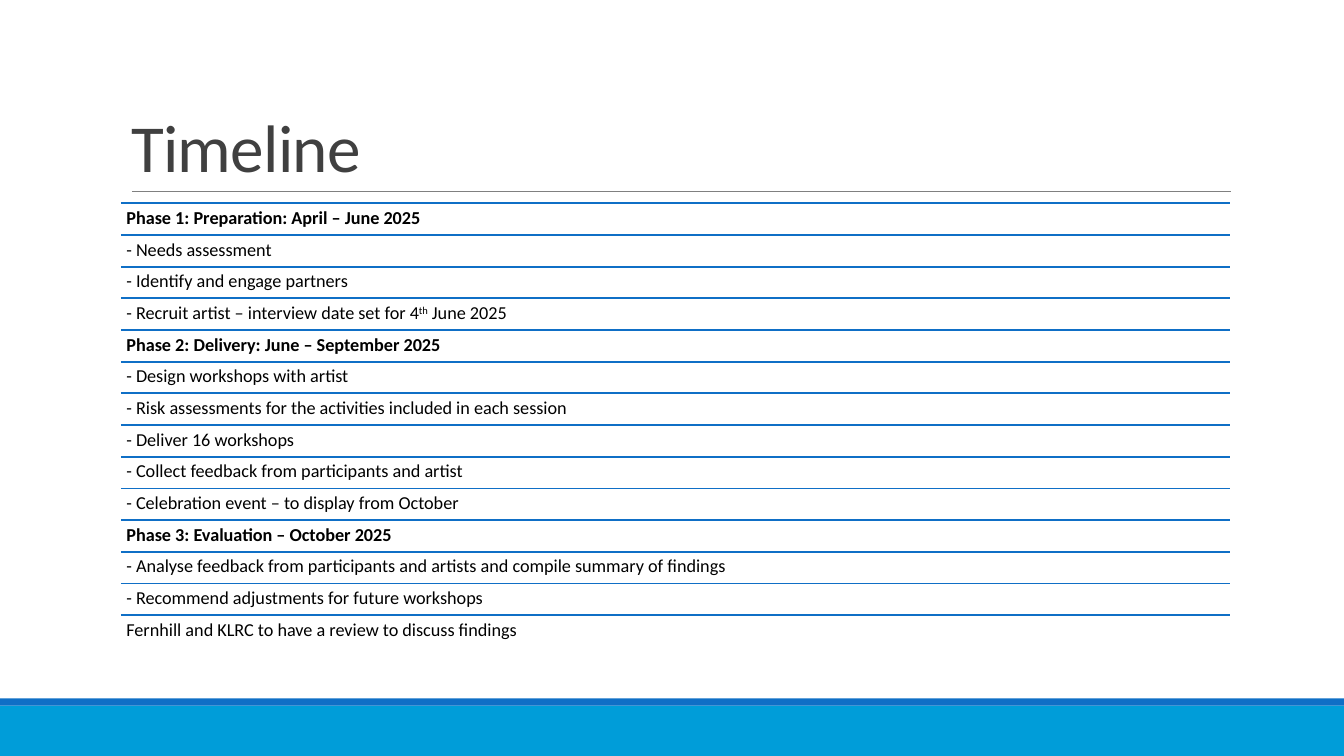
from lxml.etree import SubElement
from pptx import Presentation
from pptx.dml.color import RGBColor
from pptx.enum.shapes import MSO_CONNECTOR, MSO_SHAPE
from pptx.enum.text import MSO_ANCHOR, MSO_AUTO_SIZE, PP_ALIGN
from pptx.oxml.ns import qn
from pptx.util import Pt

BLUE = RGBColor(0x0F, 0x6F, 0xC6)
CYAN = RGBColor(0x00, 0x9D, 0xD9)
GREY = RGBColor(0x80, 0x80, 0x80)
DARK = RGBColor(0x40, 0x40, 0x40)
BLACK = RGBColor(0, 0, 0)

FONT = "Calibri"
SLIDE_WIDTH, SLIDE_HEIGHT = 960, 540
LEFT, WIDTH = 86.4, 792
ROWS_TOP, ROW_HEIGHT = 145.2, 22.63
SUPERSCRIPT = "th"

PHASES = [
    ("Phase 1: Preparation: April – June 2025", [
        ["- Needs assessment"],
        ["- Identify and engage partners"],
        ["- Recruit artist – interview date set for 4", SUPERSCRIPT, " June 2025"],
    ]),
    ("Phase 2: Delivery: June – September 2025", [
        ["- Design workshops with artist"],
        ["- Risk assessments for the activities included in each session"],
        ["- Deliver 16 workshops"],
        ["- Collect feedback from participants and artist"],
        ["- Celebration event – to display from October"],
    ]),
    ("Phase 3: Evaluation – October 2025", [
        ["- Analyse feedback from participants and artists and compile summary of findings"],
        ["- Recommend adjustments for future workshops"],
        ["Fernhill and KLRC to have a review to discuss findings"],
    ]),
]


def add_band(slide, top, height, color):
    band = slide.shapes.add_shape(
        MSO_SHAPE.RECTANGLE, Pt(0), Pt(top), Pt(SLIDE_WIDTH), Pt(height))
    band.shadow.inherit = False
    band.fill.solid()
    band.fill.fore_color.rgb = color
    band.line.fill.background()


def add_rule(slide, left, top, width, color, weight):
    rule = slide.shapes.add_connector(
        MSO_CONNECTOR.STRAIGHT, Pt(left), Pt(top), Pt(left + width), Pt(top))
    rule.line.color.rgb = color
    rule.line.width = Pt(weight)
    SubElement(rule._element.spPr, qn("a:effectLst"))


def add_run(paragraph, text, size, color, bold=False):
    run = paragraph.add_run()
    run.text = text
    run.font.name = FONT
    run.font.size = Pt(size)
    run.font.bold = bold
    run.font.color.rgb = color
    return run


def set_title(slide, text):
    title = slide.shapes.title
    title.left, title.top = Pt(LEFT), Pt(22.6)
    title.width, title.height = Pt(WIDTH), Pt(114.2)
    frame = title.text_frame
    frame.auto_size = MSO_AUTO_SIZE.NONE
    frame.vertical_anchor = MSO_ANCHOR.BOTTOM
    heading = frame.paragraphs[0]
    heading.alignment = PP_ALIGN.LEFT
    heading.line_spacing = 0.85
    run = add_run(heading, text, 48, DARK)
    run.font._element.set("spc", "-50")


def add_row(slide, index, parts, bold=False):
    top = ROWS_TOP + index * ROW_HEIGHT
    add_rule(slide, LEFT, top, WIDTH, BLUE, 1.25)
    row = slide.shapes.add_textbox(Pt(LEFT), Pt(top), Pt(WIDTH), Pt(ROW_HEIGHT))
    frame = row.text_frame
    frame.word_wrap = True
    frame.margin_left = frame.margin_right = Pt(3.9)
    frame.margin_top = frame.margin_bottom = Pt(3.9)
    entry = frame.paragraphs[0]
    entry.line_spacing = 0.9
    for part in parts:
        run = add_run(entry, part, 13, BLACK, bold)
        if part == SUPERSCRIPT:
            run.font._element.set("baseline", "30000")


def main():
    deck = Presentation()
    deck.slide_width, deck.slide_height = Pt(SLIDE_WIDTH), Pt(SLIDE_HEIGHT)
    slide = deck.slides.add_slide(deck.slide_layouts.get_by_name("Title Only"))

    add_band(slide, 504, 36, CYAN)
    add_band(slide, 498.8, 5.2, BLUE)
    add_rule(slide, 94.2, 136.8, 784.8, GREY, 0.5)
    set_title(slide, "Timeline")

    index = 0
    for phase, steps in PHASES:
        add_row(slide, index, [phase], bold=True)
        for offset, step in enumerate(steps, 1):
            add_row(slide, index + offset, step)
        index += len(steps) + 1

    deck.save("out.pptx")


if __name__ == "__main__":
    main()
